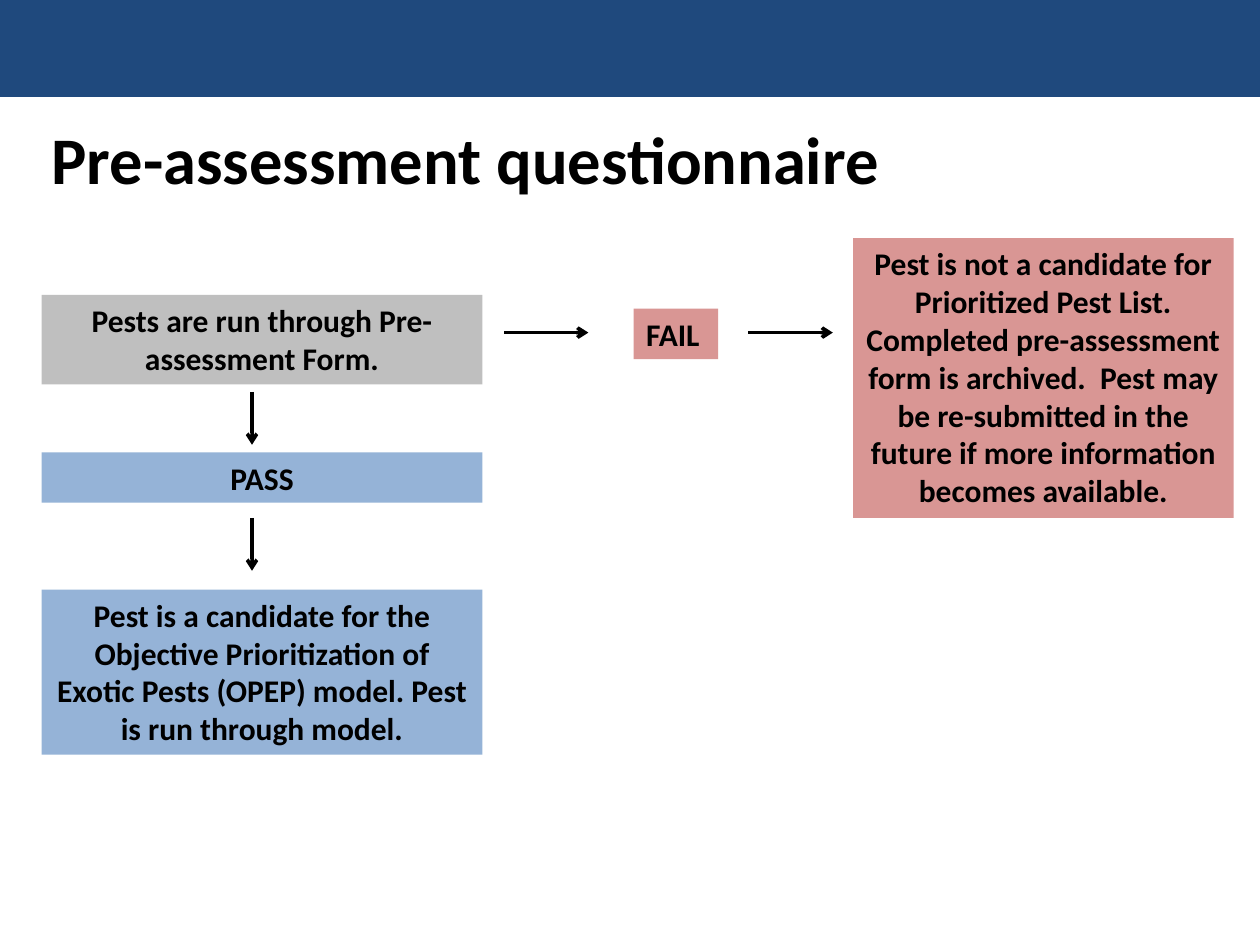
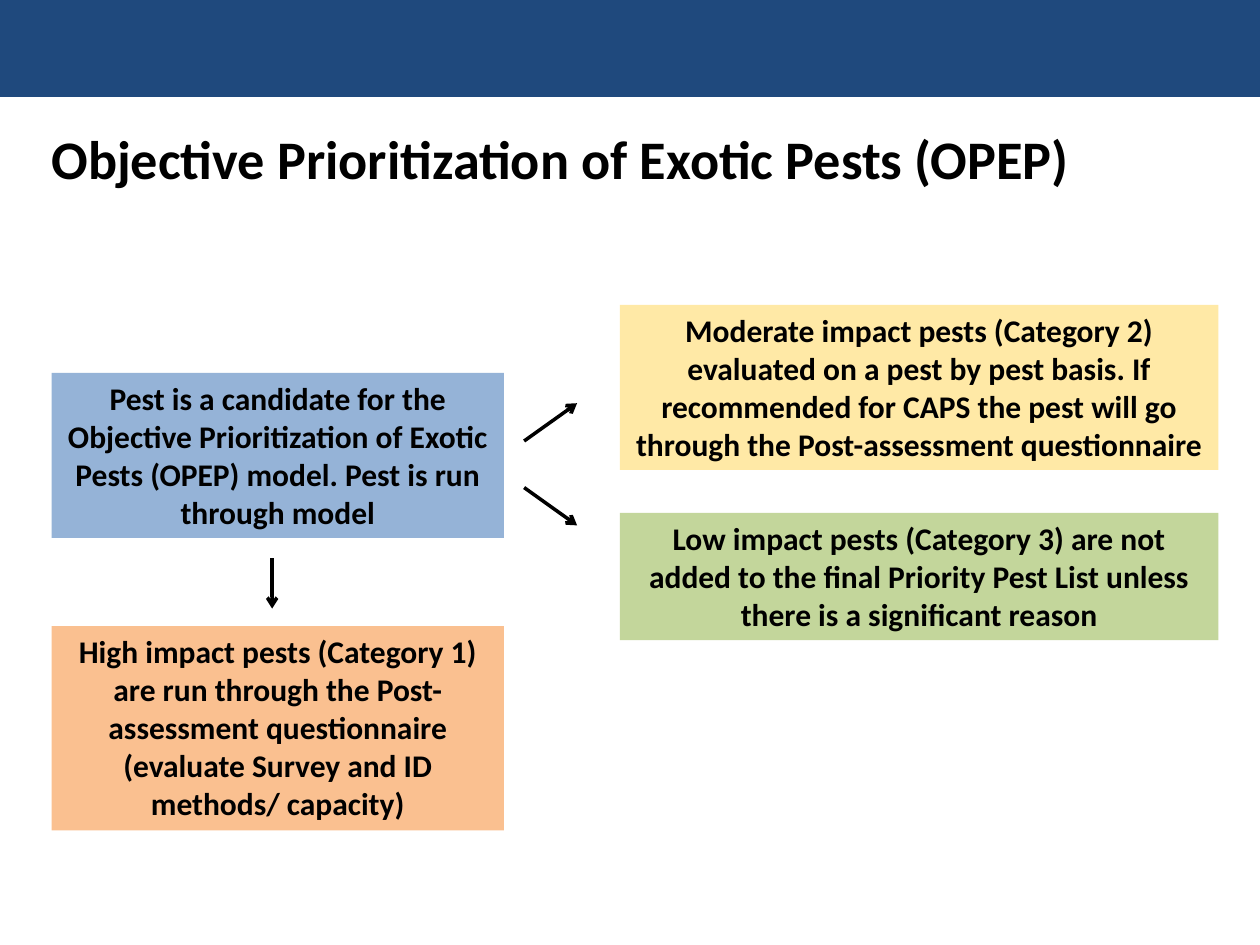
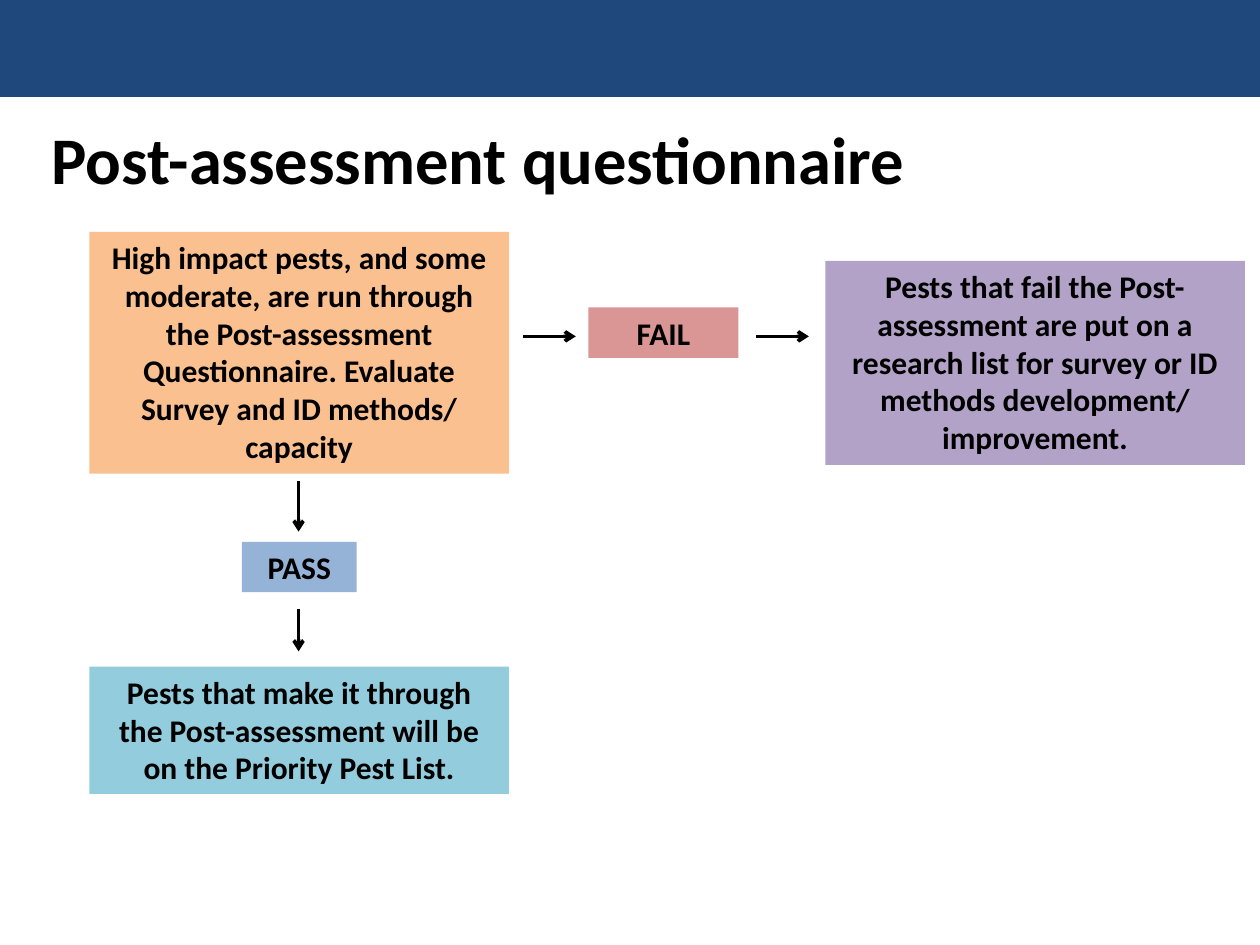
import pptx
import pptx.dml.color
import pptx.enum.shapes
import pptx.enum.text
import pptx.oxml
import pptx.oxml.ns
import pptx.util

Inches = pptx.util.Inches
ALIGN = pptx.enum.text.PP_ALIGN
FONT = "Calibri"
COLORS = {
    "band": "1F497D",
    "ink": "000000",
    "form": "BFBFBF",
    "pass": "95B3D7",
    "fail": "D99694",
    "high": "FAC090",
    "moderate": "FFE9A6",
    "low": "C3D69B",
    "listed": "93CDDD",
    "research": "B3A2C7",
}


def rgb(name):
    return pptx.dml.color.RGBColor.from_string(COLORS[name])


def add_text(tf, paragraphs, size, align):
    tf.word_wrap = True
    for i, text in enumerate(paragraphs):
        p = tf.paragraphs[0] if i == 0 else tf.add_paragraph()
        p.alignment = align
        r = p.add_run()
        r.text = text
        r.font.name = FONT
        r.font.size = pptx.util.Pt(size)
        r.font.bold = True
        r.font.color.rgb = rgb("ink")


def add_rect(s, box, color):
    sp = s.shapes.add_shape(pptx.enum.shapes.MSO_SHAPE.RECTANGLE, *map(Inches, box))
    sp.shadow.inherit = False
    sp.fill.solid()
    sp.fill.fore_color.rgb = rgb(color)
    sp.line.fill.background()
    return sp


def add_step(s, box, color, *paragraphs, align=ALIGN.CENTER):
    tf = add_rect(s, box, color).text_frame
    tf.vertical_anchor = pptx.enum.text.MSO_ANCHOR.TOP
    add_text(tf, paragraphs, 18, align)
    tf.auto_size = pptx.enum.text.MSO_AUTO_SIZE.SHAPE_TO_FIT_TEXT


def add_arrow(s, x1, y1, x2, y2):
    c = s.shapes.add_connector(
        pptx.enum.shapes.MSO_CONNECTOR.STRAIGHT, *map(Inches, (x1, y1, x2, y2))
    )
    c.line.color.rgb = rgb("ink")
    c.line.width = pptx.util.Pt(2)
    tail = pptx.oxml.parse_xml(
        f'<a:tailEnd {pptx.oxml.ns.nsdecls("a")} type="arrow"/>'
    )
    c.line._get_or_add_ln().append(tail)
    c._element.spPr.append(
        pptx.oxml.parse_xml(f'<a:effectLst {pptx.oxml.ns.nsdecls("a")}/>')
    )


def add_slide(prs, title, size):
    s = prs.slides.add_slide(prs.slide_layouts[6])
    add_rect(s, (0, 0, 10, 0.77), "band")
    tf = s.shapes.add_textbox(*map(Inches, (0.31, 0.75, 9, 1))).text_frame
    tf.vertical_anchor = pptx.enum.text.MSO_ANCHOR.MIDDLE
    add_text(tf, [title], size, ALIGN.LEFT)
    return s


def pass_column(s, box, steps, arrow_x, arrows):
    left, top, width, _ = box
    for y, w, h, color, text in steps:
        add_step(s, (left + (width - w) / 2, top + y, w, h), color, text)
    for start, end in arrows:
        add_arrow(s, left + arrow_x, top + start, left + arrow_x, top + end)


def fail_row(s, box, fail, outcome, arrow_y, arrows, fail_align=ALIGN.CENTER):
    left, top, width, height = box
    x, y, w = fail
    add_step(s, (left + x, top + y, w, 0.4), "fail", "FAIL", align=fail_align)
    outcome_width, color, paragraphs = outcome
    outcome_box = (left + width - outcome_width, top, outcome_width, height)
    add_step(s, outcome_box, color, *paragraphs)
    for start, end in arrows:
        add_arrow(s, left + start, top + arrow_y, left + end, top + arrow_y)


def impact_categories(s, box):
    left, top, width, height = box
    main_width, side_width = 3.59, 4.75
    side = left + width - side_width
    add_step(
        s, (left, top + 0.54, main_width, 1.31), "pass",
        "Pest is a candidate for the Objective Prioritization of Exotic Pests (OPEP) "
        "model. Pest is run through model",
    )
    add_step(
        s, (left, top + height - 1.62, main_width, 1.62), "high",
        "High impact pests (Category 1) are run through the Post-assessment "
        "questionnaire (evaluate Survey and ID methods/ capacity)",
    )
    add_step(
        s, (side, top, side_width, 1.31), "moderate",
        "Moderate impact pests (Category 2) evaluated on a pest by pest basis. If "
        "recommended for CAPS the pest will go through the Post-assessment questionnaire",
    )
    add_step(
        s, (side, top + 1.65, side_width, 1.01), "low",
        "Low impact pests (Category 3) are not added to the final Priority Pest List "
        "unless there is a significant reason",
    )
    add_arrow(s, left + 1.75, top + 2.01, left + 1.75, top + 2.41)
    fork = left + main_width + 0.16
    for start, end in ((1.08, 0.78), (1.45, 1.75)):
        add_arrow(s, fork, top + start, fork + 0.42, top + end)


def main():
    prs = pptx.Presentation()
    prs.slide_width, prs.slide_height = Inches(10), Inches(7.5)

    s = add_slide(prs, "Pre-assessment questionnaire", 38)
    pass_column(
        s, (0.33, 2.34, 3.5, 3.65),
        [
            (0, 3.5, 0.71, "form", "Pests are run through Pre-assessment Form."),
            (1.25, 3.5, 0.4, "pass", "PASS"),
            (2.34, 3.5, 1.31, "pass",
             "Pest is a candidate for the Objective Prioritization of Exotic Pests "
             "(OPEP) model. Pest is run through model."),
        ],
        1.67, [(0.77, 1.19), (1.77, 2.19)],
    )
    fail_row(
        s, (4, 1.89, 5.79, 2.22), (1.03, 0.56, 0.67),
        (3.02, "fail", [
            "Pest is not a candidate for Prioritized Pest List.",
            "Completed pre-assessment form is archived.  Pest may be re-submitted "
            "in the future if more information becomes available.",
        ]),
        0.75, [(0, 0.67), (1.94, 2.61)], ALIGN.LEFT,
    )

    s = add_slide(prs, "Objective Prioritization of Exotic Pests (OPEP)", 31)
    impact_categories(s, (0.41, 2.42, 9.26, 4.17))

    s = add_slide(prs, "Post-assessment questionnaire", 38)
    pass_column(
        s, (0.71, 1.84, 3.33, 4.46),
        [
            (0, 3.33, 1.92, "high",
             "High impact pests, and some moderate, are run through the "
             "Post-assessment Questionnaire. Evaluate Survey and ID methods/ capacity"),
            (2.46, 0.91, 0.4, "pass", "PASS"),
            (3.45, 3.33, 1.01, "listed",
             "Pests that make it through the Post-assessment will be on the "
             "Priority Pest List."),
        ],
        1.66, [(1.98, 2.38), (2.99, 3.33)],
    )
    fail_row(
        s, (4.15, 2.07, 5.73, 1.62), (0.52, 0.37, 1.19),
        (3.33, "research", [
            "Pests that fail the Post-assessment are put on a research list for "
            "survey or ID methods development/ improvement.",
        ]),
        0.6, [(0, 0.42), (1.85, 2.27)],
    )

    prs.save("out.pptx")


if __name__ == "__main__":
    main()
